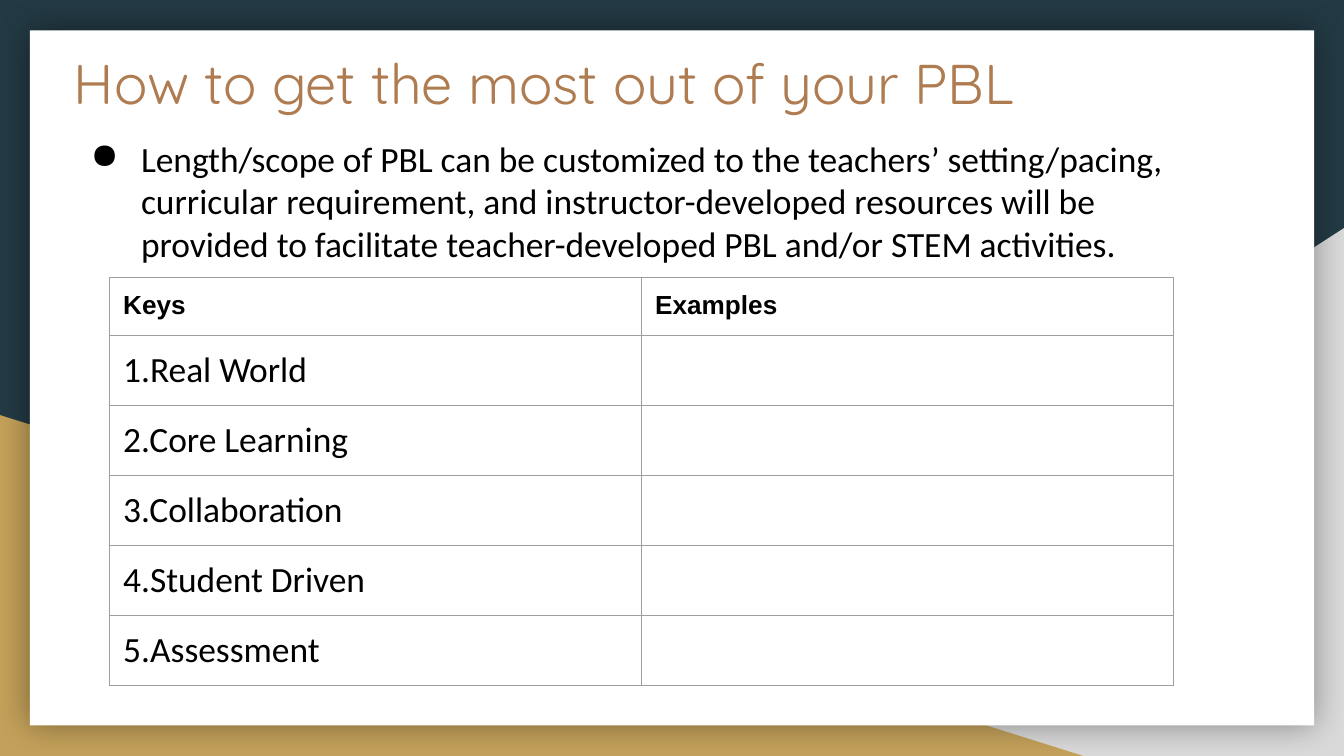
from collections import namedtuple
from dataclasses import dataclass

from lxml.etree import SubElement
from pptx import Presentation
from pptx.dml.color import RGBColor as RGB
from pptx.enum.shapes import MSO_SHAPE as Shape
from pptx.oxml import parse_xml
from pptx.oxml.ns import qn
from pptx.util import Pt

Box = namedtuple("Box", "x y w h")
SPACE = 'xmlns:a="http://schemas.openxmlformats.org/drawingml/2006/main"'


@dataclass(frozen=True)
class Theme:
    navy: str = "233A44"
    gray: str = "D9D9D9"
    gold: str = "C4A15A"
    white: str = "FFFFFF"
    brown: str = "AF7B51"
    black: str = "000000"
    rule: str = "9E9E9E"
    title: int = 30
    body: int = 19
    head: int = 14
    inset: float = 7.2


THEME = Theme()
TITLE = "How to get the most out of your PBL"
POINT = (
    "Length/scope of PBL can be customized to the teachers’ setting/pacing, "
    "curricular requirement, and instructor-developed resources will be "
    "provided to facilitate teacher-developed PBL and/or STEM activities."
)
HEADS = ["Keys", "Examples"]
KEYS = ["Real World", "Core Learning", "Collaboration", "Student Driven", "Assessment"]


def inner(box, x, y, w, h):
    return Box(box.x + x, box.y + y, w, h)


def place(box):
    return [Pt(n) for n in box]


def write(frame, text, size, font="Calibri", color=THEME.black, bold=False, bullet=None):
    frame.word_wrap = True
    frame.margin_left = frame.margin_right = Pt(THEME.inset)
    frame.margin_top = frame.margin_bottom = Pt(THEME.inset)
    para = frame.paragraphs[0]
    if bullet:
        props = para._p.get_or_add_pPr()
        props.set("marL", str(Pt(36)))
        props.set("indent", str(Pt(-27)))
        tint = SubElement(props, qn("a:buClr"))
        SubElement(tint, qn("a:srgbClr"), val=color)
        SubElement(props, qn("a:buChar"), char=bullet)
    run = para.add_run()
    run.text = text
    run.font.name = font
    run.font.size = Pt(size)
    run.font.bold = bold
    run.font.color.rgb = RGB.from_string(color)


def add_form(slide, kind, box, color):
    form = slide.shapes.add_shape(kind, *place(box))
    form.shadow.inherit = False
    form.fill.solid()
    form.fill.fore_color.rgb = RGB.from_string(color)
    form.line.fill.background()
    return form


def add_frame(slide, box):
    slide.background.fill.solid()
    slide.background.fill.fore_color.rgb = RGB.from_string(THEME.navy)
    right = add_form(slide, Shape.RIGHT_TRIANGLE, inner(box, 282.2, 122.2, 437.8, 282.8), THEME.gray)
    right.element.spPr.xfrm.set("flipH", "1")
    add_form(slide, Shape.RIGHT_TRIANGLE, inner(box, 0, 222.4, 580.4, 182.6), THEME.gold)
    card = add_form(slide, Shape.RECTANGLE, inner(box, 16, 16.3, 688, 372.4), THEME.white)
    glow = card.element.spPr.find(qn("a:effectLst"))
    glow.append(parse_xml(
        f'<a:outerShdw {SPACE} blurRad="{Pt(18)}" dist="0" dir="0" algn="ctr" rotWithShape="0">'
        f'<a:srgbClr val="{THEME.black}"><a:alpha val="40000"/></a:srgbClr></a:outerShdw>'
    ))


def add_words(slide, box):
    title = slide.shapes.add_textbox(*place(inner(box, 0, 0, 591, 75)))
    write(title.text_frame, TITLE, THEME.title, font="Quicksand", color=THEME.brown)
    body = slide.shapes.add_textbox(*place(inner(box, 0, 47.5, 623.5, 283.5)))
    write(body.text_frame, POINT, THEME.body, bullet="●")


def style_cell(cell):
    cell.fill.background()
    props = cell._tc.get_or_add_tcPr()
    for spot, side in enumerate(("lnL", "lnR", "lnT", "lnB")):
        props.insert(spot, parse_xml(
            f'<a:{side} {SPACE} w="{Pt(0.75)}"><a:solidFill>'
            f'<a:srgbClr val="{THEME.rule}"/></a:solidFill></a:{side}>'
        ))


def add_grid(slide, box):
    grid = slide.shapes.add_table(len(KEYS) + 1, len(HEADS), *place(box)).table
    grid.first_row = grid.horz_banding = False
    for col in grid.columns:
        col.width = Pt(box.w / len(HEADS))
    top = 30
    for spot, row in enumerate(grid.rows):
        row.height = Pt((box.h - top) / len(KEYS) if spot else top)
    for cell in grid.iter_cells():
        style_cell(cell)
    for spot, text in enumerate(HEADS):
        write_cell(grid.cell(0, spot), text, THEME.head, font="Arial", bold=True)
    for spot, text in enumerate(KEYS, 1):
        write_cell(grid.cell(spot, 0), f"{spot}.{text}", THEME.body)


def write_cell(cell, text, size, **look):
    write(cell.text_frame, text, size, **look)
    cell.margin_left = cell.margin_right = Pt(THEME.inset)
    cell.margin_top = cell.margin_bottom = Pt(THEME.inset)


def main():
    deck = Presentation()
    deck.slide_width, deck.slide_height = Pt(720), Pt(405)
    slide = deck.slides.add_slide(deck.slide_layouts[6])
    add_frame(slide, Box(0, 0, 720, 405))
    add_words(slide, Box(32.5, 18.7, 623.5, 331))
    add_grid(slide, Box(58.8, 148.5, 570, 217.5))
    deck.save("out.pptx")


if __name__ == "__main__":
    main()
